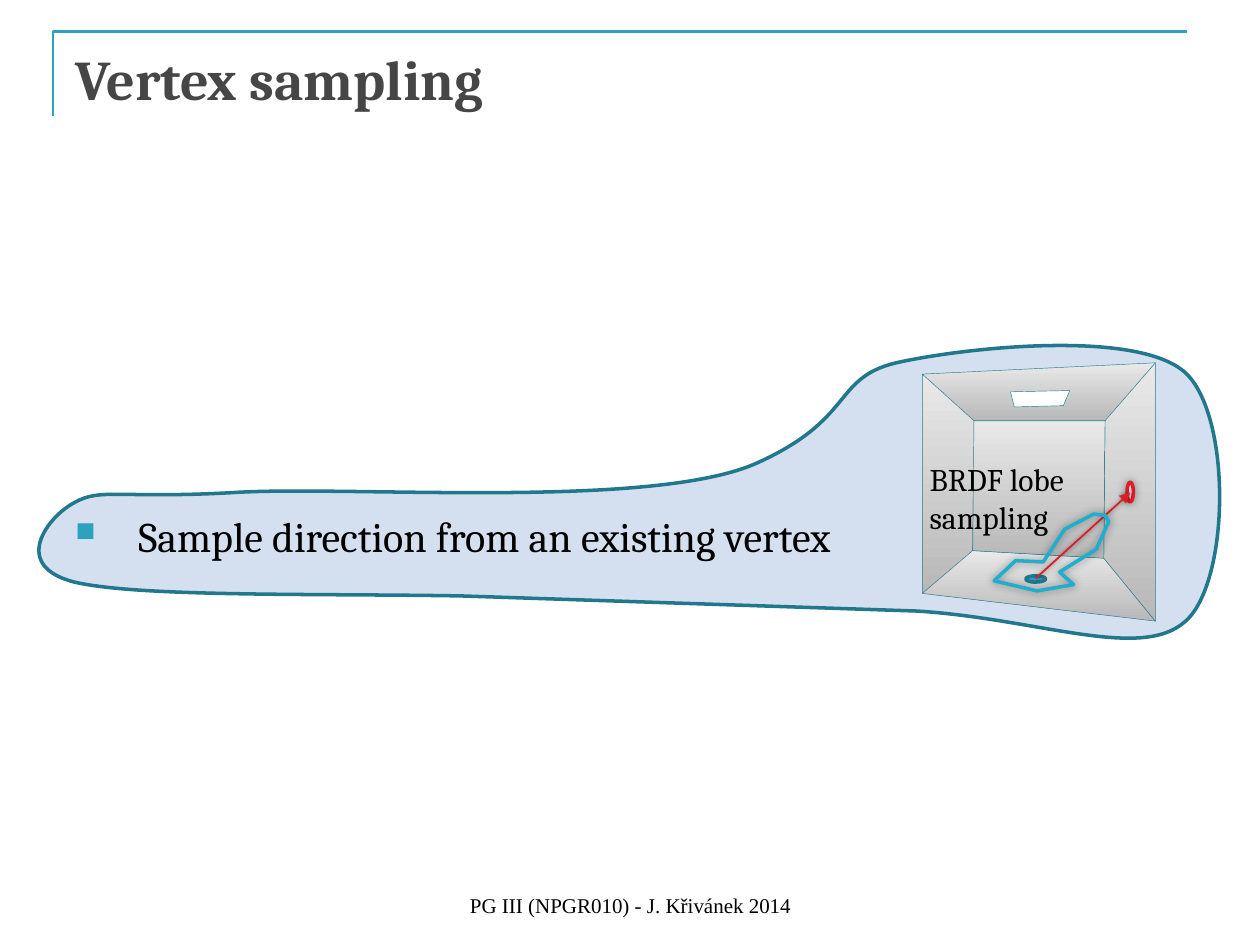
from lxml.etree import SubElement
from pptx import Presentation
from pptx.dml.color import RGBColor
from pptx.enum.shapes import MSO_CONNECTOR as Connector, MSO_SHAPE as Preset
from pptx.enum.text import MSO_ANCHOR as Anchor, PP_ALIGN as Align
from pptx.oxml.ns import qn
from pptx.util import Inches, Pt

WIDTH, HEIGHT = 10, 7.5
UNITS = 100  # freeform units to the inch
TEAL, DARK_TEAL, EDGE, RED = "2DA2BF", "21788D", "227A8F", "DA1F28"
WALL_GRADIENT = ("B8B8B8", "E9E9E9")

# Outlines: a start point, then segments of one point (line) or three (curve)
TITLE_FRAME = [(0.42, 0.92), [(0.42, 0.25)], [(9.42, 0.25)]]
HIGHLIGHT = [
    (0.59, 4.62),
    [(1.1, 4.74), (2.49, 4.71), (3.66, 4.73)],
    [(7.28, 4.85)],
    [(8.24, 4.91), (9.06, 5.25), (9.41, 4.93)],
    [(9.76, 4.62), (9.78, 3.31), (9.41, 2.96)],
    [(9.04, 2.62), (7.73, 2.75), (7.16, 2.87)],
    [(6.6, 2.98), (6.81, 3.31), (6.02, 3.67)],
    [(5.2, 4.05), (2.76, 3.85), (1.85, 3.91)],
    [(0.94, 3.96), (0.8, 3.87), (0.59, 3.99)],
    [(0.38, 4.1), (0.08, 4.49), (0.59, 4.62)],
]
# Room corners, clockwise from top left
FRONT = [(7.32, 2.97), (9.17, 2.88), (9.17, 4.93), (7.32, 4.71)]
BACK = [(7.73, 3.34), (8.77, 3.34), (8.76, 4.43), (7.72, 4.37)]
WALL_SIDES = [(0, 1), (3, 0), (2, 3), (1, 2)]  # ceiling, left, floor, right
LAMP = [(8.44, 3.22), (8.49, 3.1), (8.02, 3.11), (8.05, 3.23)]
LOBE = [(8.52, 4.64), (8.41, 4.54), (8.7, 4.36), (8.8, 4.14), (8.77, 4.09),
        (8.68, 4.08), (8.45, 4.2), (8.28, 4.46), (8.06, 4.45), (7.89, 4.61),
        (8.23, 4.69)]
RAY = [(8.97, 3.91), (8.22, 4.59)]
VERTICES = [  # left, top, rotation, fill, line, has shadow
    (8.14, 4.57, 0, TEAL, DARK_TEAL, False),
    (8.89, 3.88, 270, "F9D1D3", RED, True),
]


def colour(value):
    return RGBColor.from_string(value)


def style(shape, fill, line, width):
    """Fill with nothing, one colour or a (bottom, top) gradient; draw the line."""
    if fill is None:
        shape.fill.background()
    elif isinstance(fill, tuple):
        shape.fill.gradient()
        shape.fill.gradient_angle = 90
        for stop, value in zip(shape.fill.gradient_stops, fill):
            stop.color.rgb = colour(value)
    else:
        shape.fill.solid()
        shape.fill.fore_color.rgb = colour(fill)
    shape.line.color.rgb = colour(line)
    shape.line.width = Pt(width)
    shape.shadow.inherit = False


def add_glow(shape, blur, opacity):
    """Add a soft black shadow with no offset."""
    properties = shape._element.spPr
    effects = properties.find(qn("a:effectLst"))
    if effects is None:
        effects = SubElement(properties, qn("a:effectLst"))
    shadow = SubElement(effects, qn("a:outerShdw"), blurRad=str(Pt(blur)), dist="0")
    black = SubElement(shadow, qn("a:srgbClr"), val="000000")
    SubElement(black, qn("a:alpha"), val=str(opacity * 1000))


def add_outline(shapes, outline, fill, line, width, close=True):
    start, *segments = outline
    points = [(round(x * UNITS), round(y * UNITS))
              for x, y in [start] + [point for part in segments for point in part]]
    builder = shapes.build_freeform(*points[0], scale=Inches(1) / UNITS)
    builder.add_line_segments(points[1:], close)
    shape = builder.convert_to_shape()
    steps = iter(list(shape._element.iter(qn("a:lnTo"))))
    for segment in segments:
        first, *others = [next(steps) for _ in segment]
        if others:
            first.tag = qn("a:cubicBezTo")
            for step in others:
                first.append(step[0])
                step.getparent().remove(step)
    style(shape, fill, line, width)
    return shape


def add_polygon(shapes, corners, fill, line, width):
    outline = [corners[0]] + [[corner] for corner in corners[1:]]
    return add_outline(shapes, outline, fill, line, width)


def add_text(shapes, area, lines, size, font="Cambria", bold=False,
             anchor=Anchor.TOP, align=Align.LEFT, wrap=True):
    box = shapes.add_textbox(*map(Inches, area))
    frame = box.text_frame
    frame.word_wrap = wrap
    frame.vertical_anchor = anchor
    for index, words in enumerate(lines):
        para = frame.add_paragraph() if index else frame.paragraphs[0]
        para.alignment = align
        span = para.add_run()
        span.text = words
        span.font.name, span.font.size, span.font.bold = font, Pt(size), bold
        span.font.color.rgb = colour("464646" if bold else "000000")
    return box


def add_bullet(para, indent):
    properties = para._p.get_or_add_pPr()
    properties.set("marL", str(Inches(indent)))
    properties.set("indent", str(-Inches(indent)))
    tint = SubElement(properties, qn("a:buClr"))
    SubElement(tint, qn("a:srgbClr"), val=TEAL)
    SubElement(properties, qn("a:buSzPct"), val="65000")
    SubElement(properties, qn("a:buChar"), char="■")


def draw_room(shapes):
    for i, j in WALL_SIDES:
        wall = [FRONT[i], FRONT[j], BACK[j], BACK[i]]
        add_polygon(shapes, wall, WALL_GRADIENT, EDGE, 0.25)
    add_polygon(shapes, BACK, WALL_GRADIENT, EDGE, 0.25)
    add_polygon(shapes, LAMP, "FFFFFF", EDGE, 0.25)


def draw_sampling(shapes):
    for left, top, rotation, fill, line, shadowed in VERTICES:
        vertex = shapes.add_shape(Preset.OVAL, *map(Inches, (left, top, 0.16, 0.05)))
        vertex.rotation = rotation
        style(vertex, fill, line, 2)
        if shadowed:
            add_glow(vertex, 5, 40)
    (x1, y1), (x2, y2) = RAY
    ray = shapes.add_connector(Connector.STRAIGHT, *map(Inches, (x1, y1, x2, y2)))
    ray.line.color.rgb = colour(RED)
    ray.line.width = Pt(1)
    SubElement(ray.line._get_or_add_ln(), qn("a:headEnd"), type="triangle")
    add_glow(ray, 3, 50)
    lobe = add_polygon(shapes, LOBE, None, "1FAECD", 2)
    add_glow(lobe, 5, 40)


def main():
    deck = Presentation()
    deck.slide_width, deck.slide_height = Inches(WIDTH), Inches(HEIGHT)
    page = deck.slides.add_slide(deck.slide_layouts[6])
    add_outline(page.shapes, TITLE_FRAME, None, TEAL, 1.5, close=False)

    figure = page.shapes.add_group_shape().shapes
    add_outline(figure, HIGHLIGHT, "D4DFEF", DARK_TEAL, 2)
    draw_room(figure)
    draw_sampling(figure)
    add_text(figure, (7.28, 3.6, 1.42, 0.71), ["BRDF lobe", "sampling"], 18, wrap=False)

    add_text(page.shapes, (0.5, 0.3, 9, 1.25), ["Vertex sampling"], 32, bold=True)
    body = add_text(page.shapes, (0.5, 3.99, 9, 0.52),
                    ["Sample direction from an existing vertex"], 24, anchor=Anchor.MIDDLE)
    add_bullet(body.text_frame.paragraphs[0], 0.5)
    add_text(page.shapes, (3.42, 6.83, 3.17, 0.5),
             ["PG III (NPGR010) - J. Křivánek 2014"], 12, font="Times New Roman",
             anchor=Anchor.BOTTOM, align=Align.CENTER)
    deck.save("out.pptx")


if __name__ == "__main__":
    main()
